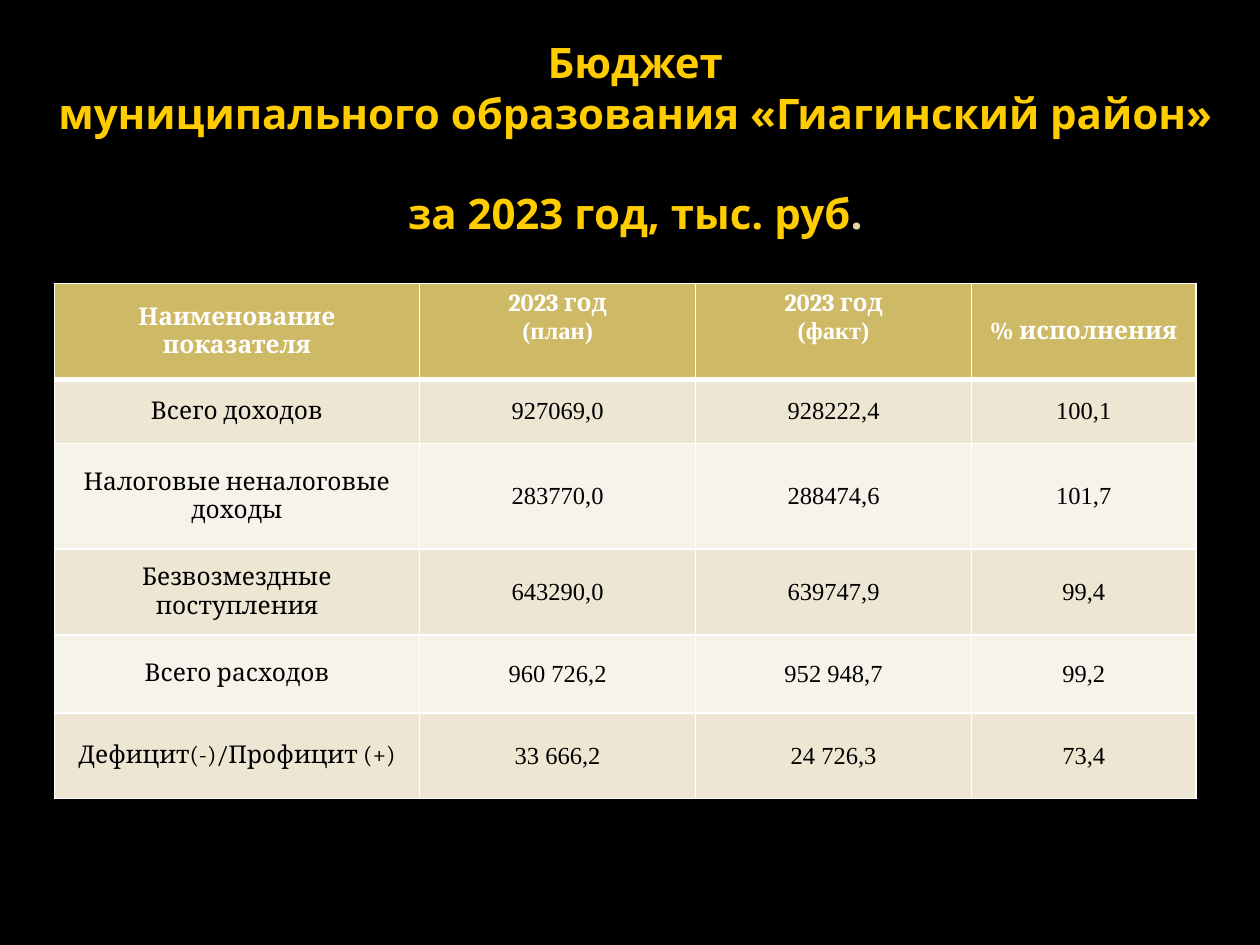
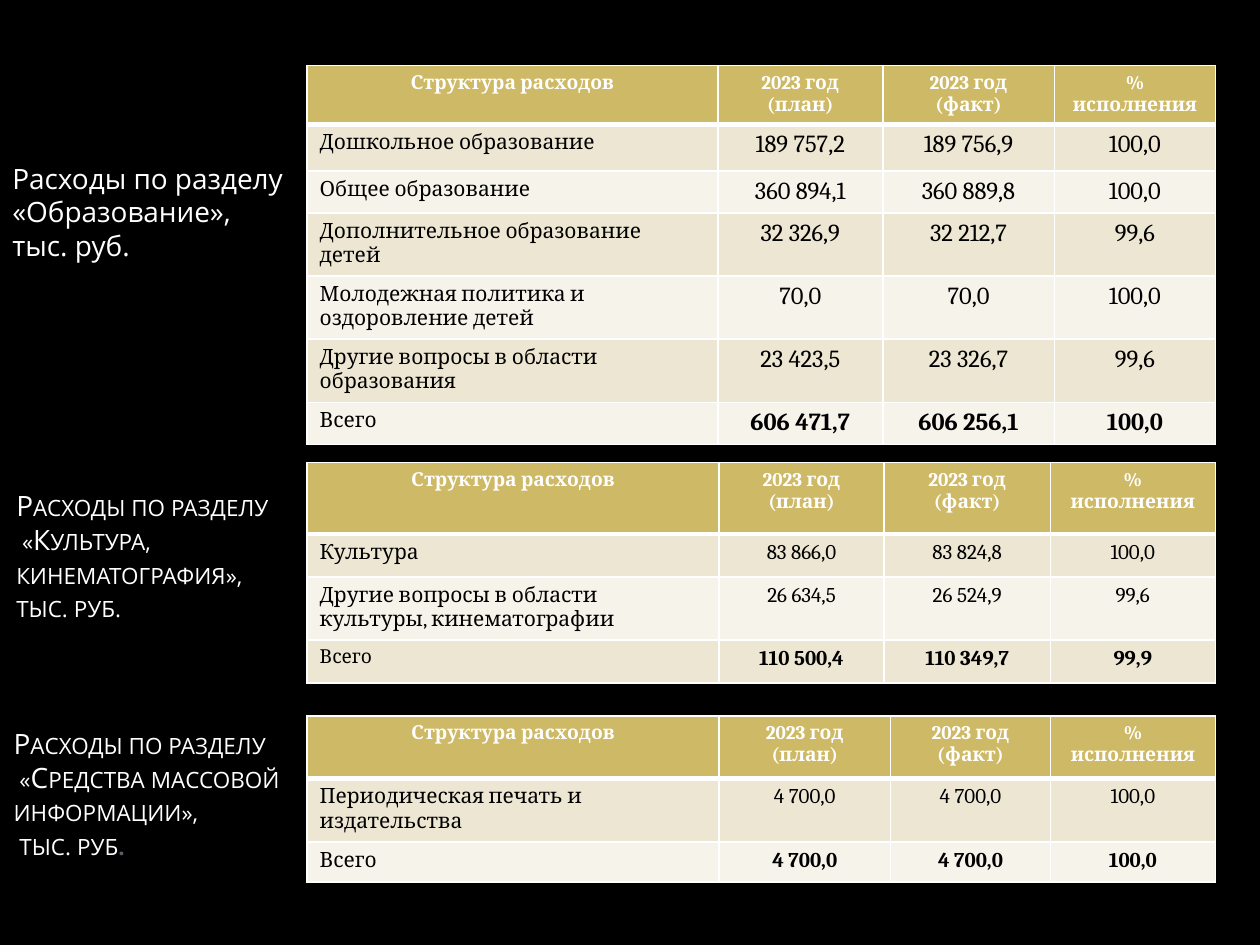
from dataclasses import dataclass

from lxml import etree
from pptx import Presentation
from pptx.dml.color import RGBColor
from pptx.enum import text as t
from pptx.oxml import ns
from pptx.util import Pt

COLORS = {
    "background": "000000",
    "title": "FFCC00",
    "title_dot": "EAD696",
    "light": "FFFFFF",
    "dark": "000000",
    "muted": "575F6D",
    "header": "CEB966",
    "band_odd": "EDE6D3",
    "band_even": "F6F3EA",
}
SANS, SERIF, TIMES = "Open Sans", "Cambria", "Times New Roman"
LINE_RATIO = 1.2
CENTER, LEFT = t.PP_ALIGN.CENTER, t.PP_ALIGN.LEFT
MIDDLE, TOP = t.MSO_ANCHOR.MIDDLE, t.MSO_ANCHOR.TOP


@dataclass
class Box:
    left: float
    top: float
    width: float
    height: float
    lines: list[str]
    small_caps: bool = False
    dot: str = ""


@dataclass
class Grid:
    left: float
    top: float
    cols: list[float]
    heights: list[float]
    rows: list[list[str]]
    head_size: float = 11
    label_size: float = 12
    value_size: float = 12
    total_label_size: float = 12
    value_font: str = SERIF
    head_note_font: str = SERIF
    label_align: t.PP_ALIGN = LEFT
    anchor: t.MSO_ANCHOR = TOP
    has_total: bool = True


TITLE = Box(20, 49, 686, 59,
            ["Бюджет", "муниципального образования «Гиагинский район»",
             "за 2023 год, тыс. руб"])

BUDGET = Grid(
    31, 162, [208.8, 157.7, 157.7, 128.2], [54.7, 36.7, 60.5, 49, 44.6, 49],
    [
        ["Наименование показателя", "2023 год\n(план)", "2023 год\n(факт)", "% исполнения"],
        ["Всего доходов", "927069,0", "928222,4", "100,1"],
        ["Налоговые неналоговые доходы", "283770,0", "288474,6", "101,7"],
        ["Безвозмездные поступления", "643290,0", "639747,9", "99,4"],
        ["Всего расходов", "960 726,2", "952 948,7", "99,2"],
        ["Дефицит(-)/Профицит (+)", "33 666,2", "24 726,3", "73,4"],
    ],
    head_size=14, label_size=14, value_size=14, value_font=TIMES,
    head_note_font=TIMES, label_align=CENTER, anchor=MIDDLE, has_total=False)

SECTION_HEAD = ["Структура расходов", "2023 год\n(план)", "2023 год\n(факт)", "%\nисполнения"]

SECTIONS = [
    (Box(0, 88.5, 235, 65.5, ["Расходы по разделу", "«Образование»,", "тыс. руб."]),
     Grid(175.5, 37.5, [234.7, 94.3, 98, 92.2], [33, 26.6, 24, 36, 36, 36, 24],
          [
              SECTION_HEAD,
              ["Дошкольное образование", "189 757,2", "189 756,9", "100,0"],
              ["Общее образование", "360 894,1", "360 889,8", "100,0"],
              ["Дополнительное образование детей", "32 326,9", "32 212,7", "99,6"],
              ["Молодежная политика и оздоровление детей", "70,0", "70,0", "100,0"],
              ["Другие вопросы в области образования", "23 423,5", "23 326,7", "99,6"],
              ["Всего", "606 471,7", "606 256,1", "100,0"],
          ], value_size=14)),
    (Box(2.2, 275.8, 173, 85,
         ["Расходы по разделу", " «Культура, кинематография»,", "тыс. руб."], True),
     Grid(175.5, 264.2, [235.4, 94.3, 95, 94.3], [41, 24.5, 35.3, 24.5],
          [
              SECTION_HEAD,
              ["Культура", "83 866,0", "83 824,8", "100,0"],
              ["Другие вопросы в области культуры, кинематографии",
               "26 634,5", "26 524,9", "99,6"],
              ["Всего", "110 500,4", "110 349,7", "99,9"],
          ], total_label_size=11)),
    (Box(0.7, 411.8, 206, 85,
         ["Расходы по разделу", " «Средства массовой", "информации»,", " тыс. руб"],
         True, "."),
     Grid(175.5, 409, [235.4, 98, 91.4, 94.3], [36, 36, 23],
          [
              SECTION_HEAD,
              ["Периодическая печать и издательства", "4 700,0", "4 700,0", "100,0"],
              ["Всего", "4 700,0", "4 700,0", "100,0"],
          ])),
]


def rgb(name: str) -> RGBColor:
    return RGBColor.from_string(COLORS[name])


def style(p, font: str, size: float, color: str, bold: bool = False, align=LEFT) -> None:
    p.alignment = align
    p.font.name, p.font.size, p.font.bold = font, Pt(size), bold
    p.font.color.rgb = rgb(color)


def add_lines(s, box: Box, size: float, color: str, bold=False, align=LEFT, anchor=TOP):
    sp = s.shapes.add_textbox(Pt(box.left), Pt(box.top), Pt(box.width), Pt(box.height))
    tf = sp.text_frame
    tf.word_wrap = True
    tf.vertical_anchor = anchor
    tf.text = "\n".join(box.lines)
    for p in tf.paragraphs:
        style(p, SANS, size, color, bold, align)
        p.line_spacing = Pt(size * LINE_RATIO)
        if box.small_caps:
            p._p.get_or_add_pPr().get_or_add_defRPr().set("cap", "small")
    if box.dot:
        add_dot(tf.paragraphs[-1], box.dot, "muted")
    return tf


def add_dot(p, dot: str, color: str) -> None:
    r = p.add_run()
    r.text = dot
    r.font.bold = True
    r.font.color.rgb = rgb(color)


def set_borders(cell, top: float, bottom: float) -> None:
    tc_pr = cell._tc.get_or_add_tcPr()
    widths = {"lnL": 1, "lnR": 1, "lnT": top, "lnB": bottom}
    for index, (side, width) in enumerate(widths.items()):
        line = etree.Element(ns.qn(f"a:{side}"), w=str(Pt(width)))
        fill = etree.SubElement(line, ns.qn("a:solidFill"))
        etree.SubElement(fill, ns.qn("a:srgbClr"), val=COLORS["light"])
        tc_pr.insert(index, line)


def fill_cell(cell, grid: Grid, row: int, col: int) -> None:
    cell.text = grid.rows[row][col]
    cell.fill.solid()
    is_total = grid.has_total and row == len(grid.rows) - 1
    if row == 0:
        band = "header"
        for index, p in enumerate(cell.text_frame.paragraphs):
            font = grid.head_note_font if index else SERIF
            style(p, font, grid.head_size, "light", True, CENTER)
    else:
        band = "band_odd" if row % 2 else "band_even"
        p = cell.text_frame.paragraphs[0]
        if col == 0:
            size = grid.total_label_size if is_total else grid.label_size
            style(p, SERIF, size, "dark", align=grid.label_align)
        else:
            style(p, grid.value_font, grid.value_size, "dark", is_total, CENTER)
    cell.fill.fore_color.rgb = rgb(band)
    cell.vertical_anchor = TOP if "\n" in grid.rows[row][col] else grid.anchor
    set_borders(cell, 3 if row == 1 else 1, 3 if row == 0 else 1)


def add_grid(s, grid: Grid) -> None:
    table = s.shapes.add_table(
        len(grid.rows), len(grid.cols), Pt(grid.left), Pt(grid.top),
        Pt(sum(grid.cols)), Pt(sum(grid.heights))).table
    table.first_row = table.horz_banding = False
    for column, width in zip(table.columns, grid.cols):
        column.width = Pt(width)
    for row, height in enumerate(grid.heights):
        table.rows[row].height = Pt(height)
        for col in range(len(grid.cols)):
            fill_cell(table.cell(row, col), grid, row, col)


def add_slide(prs):
    s = prs.slides.add_slide(prs.slide_layouts[6])
    s.background.fill.solid()
    s.background.fill.fore_color.rgb = rgb("background")
    return s


def build_budget(prs) -> None:
    s = add_slide(prs)
    tf = add_lines(s, TITLE, 24, "title", True, CENTER, MIDDLE)
    p = tf.paragraphs[-1]
    p.space_before = Pt(24 * LINE_RATIO)
    add_dot(p, ".", "title_dot")
    add_grid(s, BUDGET)


def build_sections(prs) -> None:
    s = add_slide(prs)
    for box, grid in SECTIONS:
        add_lines(s, box, 16, "light")
        add_grid(s, grid)


def main() -> None:
    prs = Presentation()
    prs.slide_width, prs.slide_height = Pt(720), Pt(540)
    build_budget(prs)
    build_sections(prs)
    prs.save("out.pptx")


if __name__ == "__main__":
    main()
